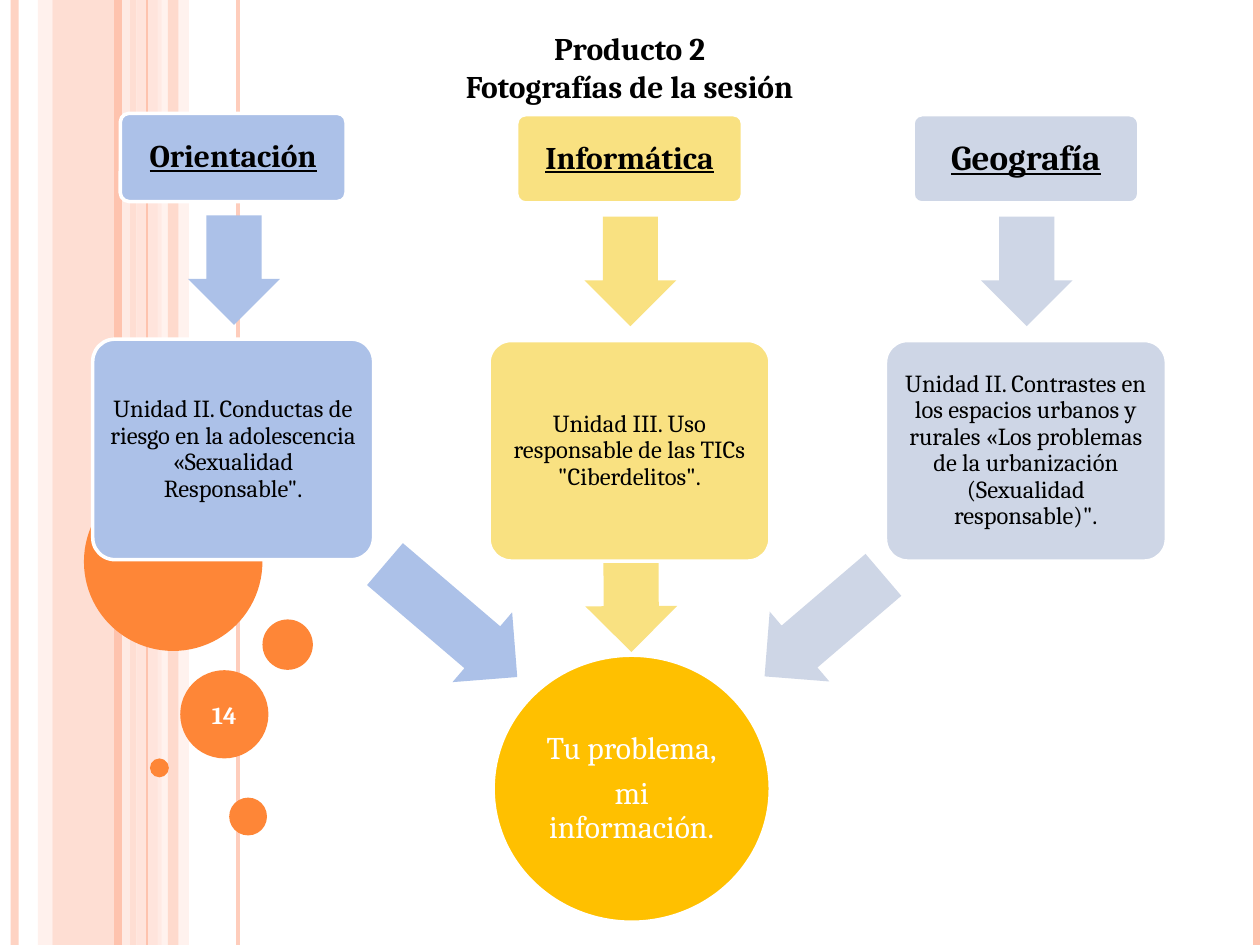
from lxml import etree
from pptx import Presentation
from pptx import util as u
from pptx.dml.color import RGBColor
from pptx.enum import shapes, text
from pptx.oxml.ns import qn

Pt = u.Pt
KIND = shapes.MSO_SHAPE
WIDTH, HEIGHT = 720, 540
FONT = "Cambria"
COLORS = {
    "stripe": "FEC3AE", "pale": "FFD9CE", "faint": "FFEDE8", "bubble": "FE8637",
    "blue": "ACC1E8", "yellow": "F9E181", "gray": "CED6E6", "gold": "FFC000",
    "white": "FFFFFF", "black": "000000",
}

# left, width, colour, opacity %
BANDS = [(30, 48, "stripe", 54), (21.6, 8.2, "pale", 36),
         (78, 14.4, "pale", 70), (90, 18, "faint", 71)]
FRONT_BAND = (96, 6, "stripe", 51)
# x, line width, colour, opacity %
RULES = [(8.4, 4.5, "stripe", 73), (72, 4.5, "faint", 83), (67.2, 4.5, "stripe", 100),
         (136, 2.25, "stripe", 82), (84, 0.75, "stripe", 100), (718, 4.5, "stripe", 100)]
# left, top, diameter
BUBBLES = [(48, 270, 102), (85.7, 433.4, 10.8), (131, 455.8, 21.6), (150, 354, 28.8)]
NUMBER_BUBBLE = (103, 383, 50.4)

# colour, left, top, heading, heading size, body, (centre x, centre y, length, rotation)
SUBJECTS = [
    ("blue", 53, 64.8, "Orientación", 18,
     "Unidad II. Conductas de riesgo en la adolescencia «Sexualidad Responsable\".",
     (257.8, 354.6, 99.4, 220.5)),
    ("yellow", 279.5, 65.6, "Informática", 18,
     "Unidad III. Uso responsable de las TICs \"Ciberdelitos\".",
     (360.7, 343.1, 59, 269.7)),
    ("gray", 506, 65.6, "Geografía", 20,
     "Unidad II. Contrastes en los espacios urbanos y rurales "
     "«Los problemas de la urbanización (Sexualidad responsable)\".",
     (470.9, 357.5, 89.3, 319.5)),
]


def rgb(name):
    return RGBColor.from_string(COLORS[name])


def set_opacity(part, percent):
    """Make the solid colour of a shape's fill or a connector's line see-through."""
    if percent < 100:
        color = next(part._element.spPr.iter(qn("a:srgbClr")))
        etree.SubElement(color, qn("a:alpha")).set("val", str(percent * 1000))


def add_figure(slide, kind, box, color, outline=None, opacity=100):
    figure = slide.shapes.add_shape(kind, *map(Pt, box))
    figure.shadow.inherit = False
    figure.fill.solid()
    figure.fill.fore_color.rgb = rgb(color)
    set_opacity(figure, opacity)
    if outline:
        figure.line.color.rgb = rgb(outline)
        figure.line.width = Pt(2)
    else:
        figure.line.fill.background()
    return figure


def write(holder, lines, size, color="black", bold=False, underline=False,
          inset=None, spacing=None, after=None, anchor=text.MSO_ANCHOR.MIDDLE):
    frame = holder.text_frame
    frame.word_wrap = True
    frame.vertical_anchor = anchor
    if inset is not None:
        frame.margin_left = frame.margin_right = Pt(inset)
        frame.margin_top = frame.margin_bottom = Pt(inset)
    for index, line in enumerate(lines):
        paragraph = frame.add_paragraph() if index else frame.paragraphs[0]
        paragraph.alignment = text.PP_ALIGN.CENTER
        paragraph.line_spacing = spacing
        paragraph.space_after = after
        run = paragraph.add_run()
        run.text = line
        run.font.name = FONT
        run.font.size = Pt(size)
        run.font.bold = bold
        run.font.underline = underline
        run.font.color.rgb = rgb(color)


def write_label(holder, lines, size, **style):
    """Tight text of the diagram's boxes and circle."""
    write(holder, lines, size, spacing=0.9, after=Pt(0.35 * size), **style)


def add_arrow(slide, center_x, center_y, length, rotation, color):
    thickness = 52.5
    box = (center_x - length / 2, center_y - thickness / 2, length, thickness)
    arrow = add_figure(slide, KIND.LEFT_ARROW, box, color)
    arrow.adjustments[0], arrow.adjustments[1] = 0.6, 0.5
    arrow.rotation = rotation


def add_card(slide, box, color):
    card = add_figure(slide, KIND.ROUNDED_RECTANGLE, box, color, outline="white")
    card.adjustments[0] = 0.1
    return card


def add_band(slide, left, width, color, opacity):
    add_figure(slide, KIND.RECTANGLE, (left, 0, width, HEIGHT), color, opacity=opacity)


def add_rule(slide, x, width, color, opacity):
    rule = slide.shapes.add_connector(shapes.MSO_CONNECTOR.STRAIGHT,
                                      Pt(x), 0, Pt(x), Pt(HEIGHT))
    rule.line.color.rgb = rgb(color)
    rule.line.width = Pt(width)
    set_opacity(rule, opacity)
    etree.SubElement(rule._element.spPr, qn("a:effectLst"))


def add_backdrop(slide, number):
    for band in BANDS:
        add_band(slide, *band)
    for rule in RULES:
        add_rule(slide, *rule)
    add_band(slide, *FRONT_BAND)
    for left, top, size in BUBBLES:
        add_figure(slide, KIND.OVAL, (left, top, size, size), "bubble")
    left, top, size = NUMBER_BUBBLE
    badge = add_figure(slide, KIND.OVAL, (left, top, size, size), "bubble")
    write(badge, [number], 14, color="white", bold=True, inset=0)


def add_subject(slide, color, left, top, heading, heading_size, body, link):
    """A heading, a down arrow, a body card, and the arrow to the conclusion."""
    card_width, card_height = 160.5, 126
    heading_width, heading_height = 129, 50.4
    add_arrow(slide, left + card_width / 2 + 0.5, top + 89.5, 62.6, 270, color)
    heading_left = left + (card_width - heading_width) / 2
    title = add_card(slide, (heading_left, top, heading_width, heading_height), color)
    write_label(title, [heading], heading_size, bold=True, underline=True, inset=3)
    add_arrow(slide, *link, color)
    card = add_card(slide, (left, top + 129, card_width, card_height), color)
    write_label(card, [body], 14, inset=2)


def add_conclusion(slide, box, lines):
    circle = add_figure(slide, KIND.OVAL, box, "gold", outline="white")
    write_label(circle, lines, 18, color="white", inset=1)


def add_title(slide, box, lines):
    title = slide.shapes.add_textbox(*map(Pt, box))
    write(title, lines, 18, bold=True, anchor=text.MSO_ANCHOR.TOP)


def main():
    deck = Presentation()
    deck.slide_width, deck.slide_height = Pt(WIDTH), Pt(HEIGHT)
    slide = deck.slides.add_slide(deck.slide_layouts[6])
    add_backdrop(slide, "14")
    add_conclusion(slide, (281.8, 374.4, 158.4, 152.6), ["Tu problema,", "mi información."])
    for subject in SUBJECTS:
        add_subject(slide, *subject)
    add_title(slide, (76.5, 13, 566.6, 51), ["Producto 2", "Fotografías de la sesión"])
    deck.save("out.pptx")


if __name__ == "__main__":
    main()
